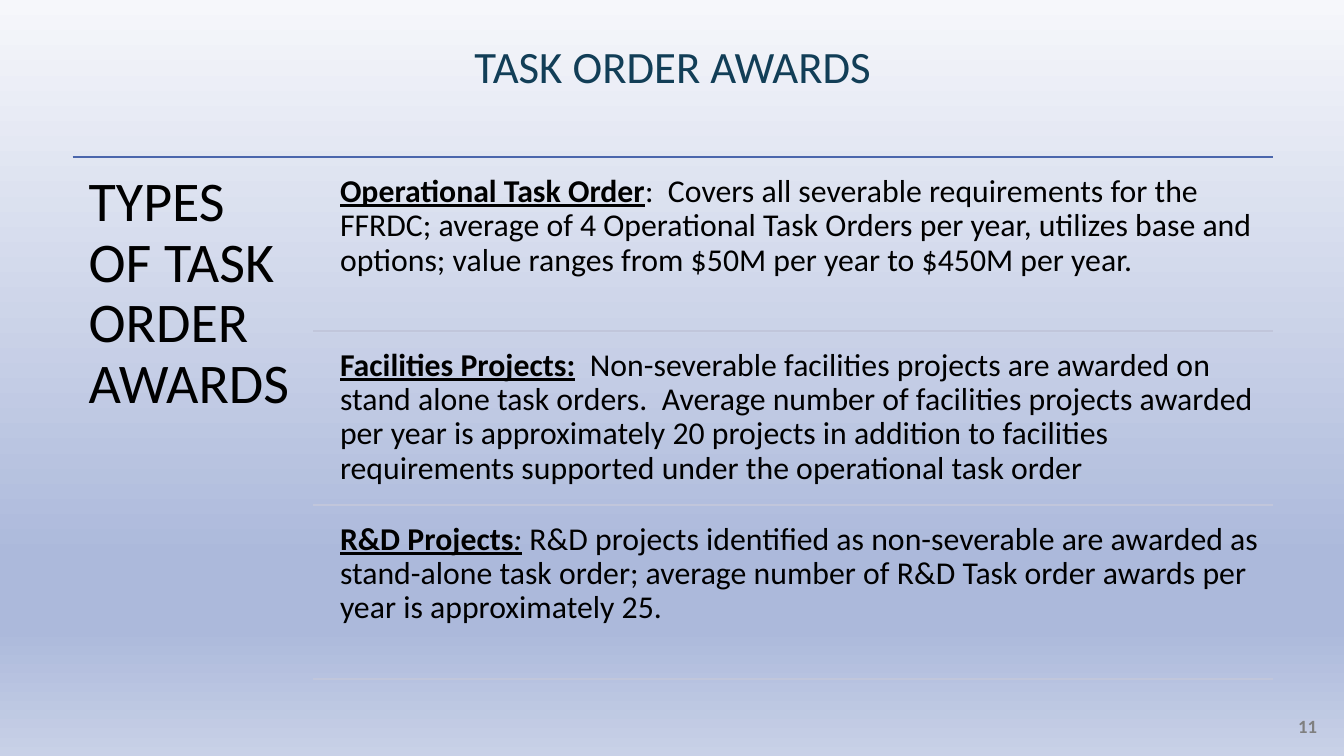
from lxml import etree
from pptx import Presentation, util as u
from pptx.dml.color import RGBColor
from pptx.enum import shapes, text
from pptx.oxml.ns import qn

NAVY = RGBColor(0x12, 0x3E, 0x57)
BLUE = RGBColor(0x4A, 0x66, 0xAC)
PALE = RGBColor(0xC1, 0xC6, 0xDB)
GRAY = RGBColor(0x7F, 0x7F, 0x7F)
BLACK = RGBColor(0, 0, 0)
BACKGROUND_STOPS = [(0, "F6F7FB"), (74, "ACB9DB"), (83, "ACB9DB"), (100, "C8D1E7")]

SLIDE_WIDTH = 10
SLIDE_HEIGHT = SLIDE_WIDTH * 9 / 16
LEFT, RIGHT, TOP, BOTTOM = 0.54, 9.47, 1.17, 5.05
DIVIDER_LEFT, ENTRY_LEFT = 2.33, 2.46
ENTRY_HEIGHT = 1.23

HEADING = {"bold": True, "underline": True}
ENTRIES = [
    [("Operational Task Order", HEADING),
     (":  Covers all severable requirements for the FFRDC; average of 4 Operational "
      "Task Orders per year, utilizes base and options; value ranges from $50M per "
      "year to $450M per year.", {})],
    [("Facilities Projects:", HEADING),
     ("  Non-severable facilities projects are awarded on stand alone task orders.  "
      "Average number of facilities projects awarded per year is approximately 20 "
      "projects in addition to facilities requirements supported under the "
      "operational task order", {})],
    [("R&D Projects", HEADING),
     (":", {"italic": True, "underline": True}),
     (" ", {"bold": True}),
     ("R&D projects identified as non-severable are awarded as stand-alone task "
      "order; average number of R&D Task order awards per year is approximately "
      "25.", {})],
]
ENTRY_STEP = (BOTTOM - TOP) / len(ENTRIES)


def write_text(shape, runs, size, color=BLACK, align=text.PP_ALIGN.LEFT,
               anchor=text.MSO_ANCHOR.TOP, inset=0, spacing=0.9):
    """Fill a shape with one paragraph of (words, font settings) runs."""
    frame = shape.text_frame
    frame.word_wrap = True
    frame.auto_size = text.MSO_AUTO_SIZE.NONE
    frame.vertical_anchor = anchor
    frame.margin_left = frame.margin_right = u.Inches(inset)
    frame.margin_top = frame.margin_bottom = u.Inches(inset)
    paragraph = frame.paragraphs[0]
    paragraph.alignment = align
    paragraph.line_spacing = spacing
    paragraph.space_before = u.Pt(0)
    for words, settings in runs:
        run = paragraph.add_run()
        run.text = words
        font = run.font
        font.name, font.size = "Calibri", u.Pt(size)
        font.color.rgb = color
        font.bold = settings.get("bold", False)
        font.italic = settings.get("italic", False)
        font.underline = settings.get("underline", False)


class SlideBuilder:
    def __init__(self, presentation):
        self.slide = presentation.slides.add_slide(presentation.slide_layouts[5])

    def background(self, stops):
        fill = self.slide.background.fill
        fill.gradient()
        fill.gradient_angle = 270
        stop_list = next(self.slide._element.iter(qn("a:gsLst")))
        for stop in list(stop_list):
            stop_list.remove(stop)
        for percent, color in stops:
            stop = etree.SubElement(stop_list, qn("a:gs"), pos=str(percent * 1000))
            etree.SubElement(stop, qn("a:srgbClr"), val=color)

    def title(self, words, left, top, width, height, **style):
        shape = self.slide.shapes.title
        shape.left, shape.top = u.Inches(left), u.Inches(top)
        shape.width, shape.height = u.Inches(width), u.Inches(height)
        write_text(shape, [(words, {})], **style)

    def text_box(self, runs, left, top, width, height, **style):
        box = self.slide.shapes.add_textbox(
            u.Inches(left), u.Inches(top), u.Inches(width), u.Inches(height))
        write_text(box, runs, **style)

    def horizontal_line(self, left, right, y, color):
        line = self.slide.shapes.add_connector(
            shapes.MSO_CONNECTOR.STRAIGHT,
            u.Inches(left), u.Inches(y), u.Inches(right), u.Inches(y))
        line.line.color.rgb = color
        line.line.width = u.Pt(1)
        etree.SubElement(line._element.spPr, qn("a:effectLst"))


def main():
    presentation = Presentation()
    presentation.slide_width = u.Inches(SLIDE_WIDTH)
    presentation.slide_height = u.Inches(SLIDE_HEIGHT)
    builder = SlideBuilder(presentation)
    builder.background(BACKGROUND_STOPS)
    builder.title("TASK ORDER AWARDS", LEFT, 0.34, RIGHT - LEFT, 0.35, size=24,
                  color=NAVY, align=text.PP_ALIGN.CENTER,
                  anchor=text.MSO_ANCHOR.BOTTOM)

    builder.horizontal_line(LEFT, RIGHT, TOP, BLUE)
    builder.text_box([("TYPES OF TASK ORDER AWARDS", {})], LEFT, TOP,
                     DIVIDER_LEFT - LEFT, 3.94, size=30, inset=0.12)
    for index, runs in enumerate(ENTRIES, start=1):
        bottom = TOP + index * ENTRY_STEP
        builder.text_box(runs, ENTRY_LEFT, bottom - ENTRY_HEIGHT,
                         RIGHT - ENTRY_LEFT, ENTRY_HEIGHT, size=17, inset=0.07)
        builder.horizontal_line(DIVIDER_LEFT, RIGHT, bottom, PALE)

    builder.text_box([("11", {"bold": True})], 9.46, 5.32, 0.34, 0.2, size=10,
                     color=GRAY, align=text.PP_ALIGN.RIGHT, spacing=1.01)
    presentation.save("out.pptx")


if __name__ == "__main__":
    main()
